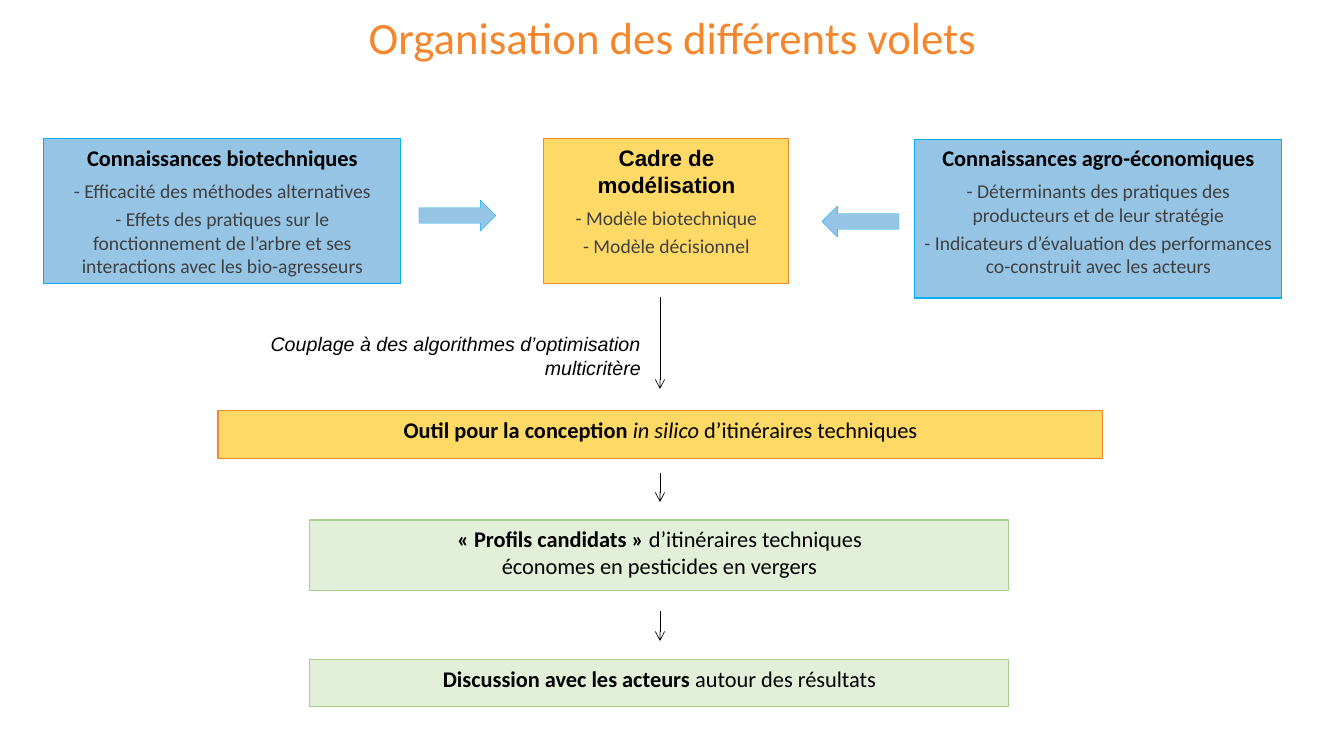
from lxml import etree
from pptx import Presentation
from pptx import util as u
from pptx.dml.color import RGBColor
from pptx.enum import shapes, text
from pptx.oxml.ns import qn

PX = 914400 / 100.8
BLACK, GREY, ORANGE = "000000", "404040", "F5862B"
BLUE = dict(fill="0070C0", line="00B0F0", alpha=41)
YELLOW = dict(fill="FFD966", line=ORANGE)
GREEN = dict(fill="E2F0D9", line="A9D18E")

TITLE = "Organisation des différents volets"
TITLE_AREA = (8, 5, 1329, 65)
COUPLING = "Couplage à des algorithmes d’optimisation multicritère"
COUPLING_AREA = (214, 327, 437, 57)

TOPICS = [
    ((44, 139, 357, 145), BLUE, 10, "Calibri", "Connaissances biotechniques", [
        "- Efficacité des méthodes alternatives",
        "- Effets des pratiques sur le fonctionnement de l’arbre et ses interactions avec les bio-agresseurs"]),
    ((544, 139, 245, 145), YELLOW, 10, "Arial", "Cadre de modélisation", [
        "- Modèle biotechnique",
        "- Modèle décisionnel"]),
    ((915, 139, 367, 159), BLUE, 8, "Calibri", "Connaissances agro-économiques", [
        "- Déterminants des pratiques des producteurs et de leur stratégie",
        "- Indicateurs d’évaluation des performances co-construit avec les acteurs"]),
]
STEPS = [
    ((218, 411, 885, 48), YELLOW, [
        [("Outil pour la conception ", "bold"), ("in silico ", "italic"), ("d’itinéraires techniques", None)]]),
    ((310, 520, 699, 71), GREEN, [
        [("« Profils candidats » ", "bold"), ("d’itinéraires techniques", None)],
        [("économes en pesticides en vergers", None)]]),
    ((310, 660, 699, 47), GREEN, [
        [("Discussion avec les acteurs ", "bold"), ("autour des résultats", None)]]),
]
BLOCK_ARROWS = [
    (shapes.MSO_SHAPE.RIGHT_ARROW, (419, 200, 77, 31)),
    (shapes.MSO_SHAPE.LEFT_ARROW, (822, 206, 77, 31)),
]
FLOW_X = 660
FLOW_ARROWS = [(297, 389), (473, 502), (611, 641)]


def emu(*lengths):
    return [round(length * PX) for length in lengths]


def color(value):
    return RGBColor.from_string(value)


def set_all(target, values):
    for name, value in values.items():
        setattr(target, name, value)


def set_frame(box, side=10):
    left, top = emu(side, 5)
    set_all(box.text_frame, dict(
        word_wrap=True, auto_size=text.MSO_AUTO_SIZE.NONE, vertical_anchor=text.MSO_ANCHOR.TOP,
        margin_left=left, margin_right=left, margin_top=top, margin_bottom=top))
    return box.text_frame


def add_para(frame, first, spans, align=text.PP_ALIGN.CENTER, **spacing):
    para = frame.paragraphs[0] if first else frame.add_paragraph()
    set_all(para, dict(alignment=align, line_spacing=1.0, **spacing))
    for words, size, font, tone, style in spans:
        span = para.add_run()
        span.text = words
        set_all(span.font, dict(size=u.Pt(size), name=font,
                                bold=style == "bold", italic=style == "italic"))
        span.font.color.rgb = color(tone)


def add_box(page, kind, area, look, weight=0.75):
    box = page.shapes.add_shape(kind, *emu(*area))
    box.shadow.inherit = False
    box.fill.solid()
    box.fill.fore_color.rgb = color(look["fill"])
    if "alpha" in look:
        tint = box.fill._xPr.find(qn("a:solidFill"))[0]
        etree.SubElement(tint, qn("a:alpha"), val=str(look["alpha"] * 1000))
    box.line.color.rgb = color(look["line"])
    box.line.width = u.Pt(weight)
    return box


def add_flow_arrow(page, top, bottom):
    arrow = page.shapes.add_connector(
        shapes.MSO_CONNECTOR.STRAIGHT, *emu(FLOW_X, top, FLOW_X, bottom))
    arrow.line.color.rgb = color(BLACK)
    arrow.line.width = u.Pt(0.5)
    etree.SubElement(arrow.line._get_or_add_ln(), qn("a:tailEnd"), type="arrow")
    etree.SubElement(arrow._element.spPr, qn("a:effectLst"))


def main():
    deck = Presentation()
    deck.slide_width, deck.slide_height = emu(1344, 756)
    page = deck.slides.add_slide(deck.slide_layouts[5])

    title = page.shapes.title
    set_all(title, dict(zip(("left", "top", "width", "height"), emu(*TITLE_AREA))))
    add_para(set_frame(title), True, [(TITLE, 32, "Calibri", ORANGE, None)])

    for area, look, side, font, heading, points in TOPICS:
        frame = set_frame(add_box(page, shapes.MSO_SHAPE.RECTANGLE, area, look), side)
        add_para(frame, True, [(heading, 16, font, BLACK, "bold")], space_after=u.Pt(3))
        for point in points:
            add_para(frame, False, [(point, 14, "Calibri", GREY, None)], space_before=u.Pt(3))

    for area, look, lines in STEPS:
        frame = set_frame(add_box(page, shapes.MSO_SHAPE.RECTANGLE, area, look))
        for index, line in enumerate(lines):
            add_para(frame, index == 0,
                     [(words, 16, "Calibri", BLACK, style) for words, style in line])

    coupling = page.shapes.add_textbox(*emu(*COUPLING_AREA))
    add_para(set_frame(coupling), True, [(COUPLING, 14, "Arial", BLACK, "italic")],
             align=text.PP_ALIGN.RIGHT)

    for kind, area in BLOCK_ARROWS:
        add_box(page, kind, area, BLUE, 0.25)
    for top, bottom in FLOW_ARROWS:
        add_flow_arrow(page, top, bottom)

    deck.save("out.pptx")


if __name__ == "__main__":
    main()
